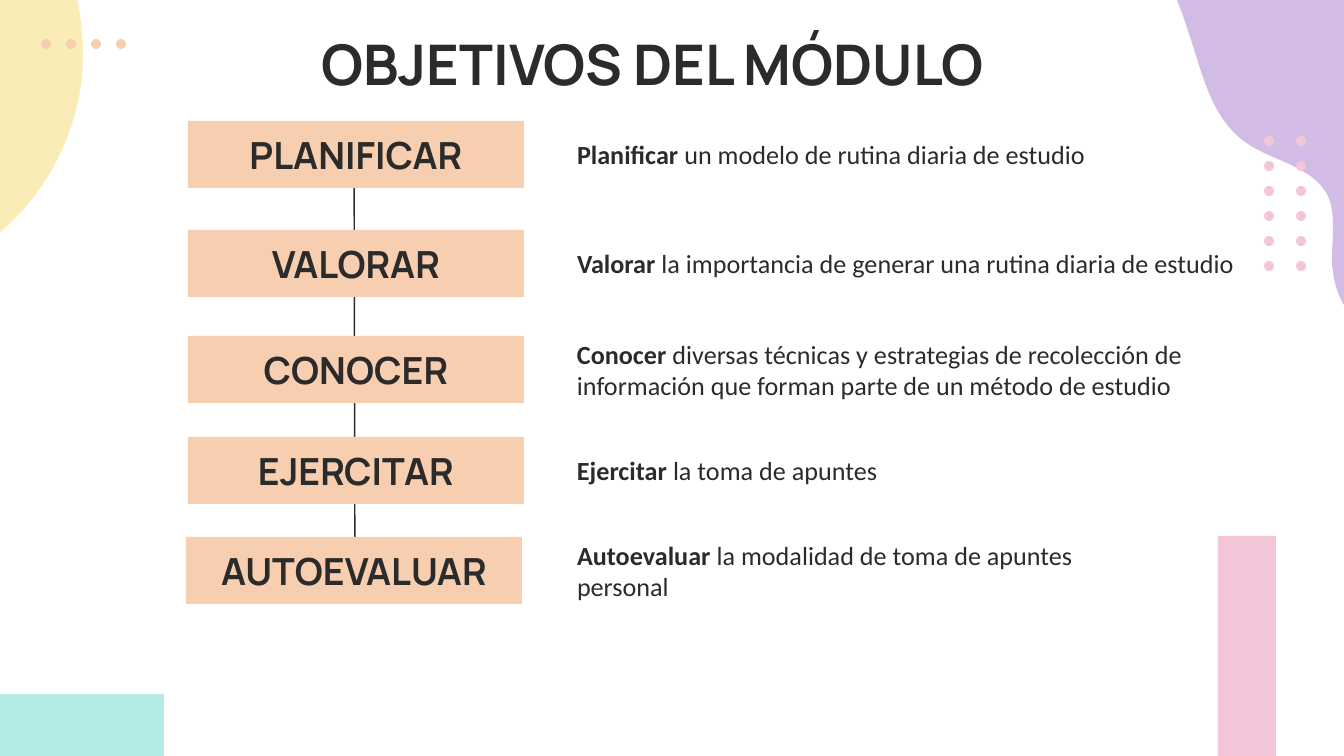
from dataclasses import dataclass

from lxml import etree
from pptx import Presentation
from pptx.dml.color import RGBColor
from pptx.enum.shapes import MSO_CONNECTOR, MSO_SHAPE
from pptx.enum.text import MSO_ANCHOR, PP_ALIGN
from pptx.oxml.ns import qn
from pptx.util import Pt

STRAIGHT = MSO_CONNECTOR.STRAIGHT
RECTANGLE = MSO_SHAPE.RECTANGLE
OVAL = MSO_SHAPE.OVAL
TOP = MSO_ANCHOR.TOP
MIDDLE = MSO_ANCHOR.MIDDLE
LEFT = PP_ALIGN.LEFT
CENTER = PP_ALIGN.CENTER

SLIDE_WIDTH, SLIDE_HEIGHT = 1344, 756
EMU_PER_PX = 9144000 / SLIDE_WIDTH
INSET = 13
CURVE_STEPS = 16


@dataclass(frozen=True)
class Theme:
    ink: str = "2B2B2B"
    peach: str = "F7CFB0"
    yellow: str = "FAECB6"
    lilac: str = "D2BCE6"
    pink: str = "F3C5D8"
    mint: str = "B5EBE7"
    heading_font: str = "Manrope"
    body_font: str = "Calibri"
    title_size: int = 30
    step_size: int = 20
    body_size: int = 14
    line_width: float = 0.75


THEME = Theme()

YELLOW_BLOB = (
    [(112, -245), (-113, -245), (-113, 235), (-3, 235)],
    [
        [(50, 191), (83, 124), (83, 56)],
        [(83, 3), (65, -48), (63, -102)],
        [(63, -156), (82, -206), (112, -245)],
    ],
)
LILAC_BLOB = (
    [(1126, -89), (1445, -89), (1445, 329), (1363, 329)],
    [
        [(1347, 314), (1335, 294), (1333, 271)],
        [(1332, 267), (1332, 263), (1332, 261)],
        [(1332, 250), (1333, 238), (1333, 227)],
        [(1333, 215), (1332, 204), (1327, 194)],
        [(1310, 165), (1271, 161), (1245, 142)],
        [(1210, 117), (1202, 71), (1188, 31)],
        [(1175, -12), (1153, -52), (1126, -89)],
    ],
)

OBJECTIVES = [
    ("Planificar", "un modelo de rutina diaria de estudio", 188, 121, 720),
    ("Valorar", "la importancia de generar una rutina diaria de estudio", 188, 230, 720),
    (
        "Conocer",
        "diversas técnicas y estrategias de recolección de información "
        "que forman parte de un método de estudio",
        188, 336, 676,
    ),
    ("Ejercitar", "la toma de apuntes", 188, 437, 712),
    ("Autoevaluar", "la modalidad de toma de apuntes personal", 186, 537, 540),
]
STEP_WIDTH, STEP_HEIGHT = 336, 67
DESCRIPTION_LEFT = 564


def px(length):
    return round(length * EMU_PER_PX)


def paint(shape, color):
    shape.shadow.inherit = False
    shape.fill.solid()
    shape.fill.fore_color.rgb = RGBColor.from_string(color)
    shape.line.fill.background()


def add_block(slide, preset, box, color):
    block = slide.shapes.add_shape(preset, *map(px, box))
    paint(block, color)
    return block


def bezier(start, first, second, end):
    for step in range(1, CURVE_STEPS + 1):
        t = step / CURVE_STEPS
        u = 1 - t
        weights = (u**3, 3 * u * u * t, 3 * u * t * t, t**3)
        yield tuple(
            sum(weight * coordinate for weight, coordinate in zip(weights, axis))
            for axis in zip(start, first, second, end)
        )


def add_blob(slide, corners, curves, color):
    outline = list(corners)
    for curve in curves:
        outline.extend(bezier(outline[-1], *curve))
    points = [(px(x), px(y)) for x, y in outline]
    builder = slide.shapes.build_freeform(*points[0])
    builder.add_line_segments(points[1:], close=True)
    paint(builder.convert_to_shape(), color)


def add_dots(slide, left, top, columns, rows, column_gap, row_gap, color):
    for column in range(columns):
        for row in range(rows):
            box = (left + column * column_gap, top + row * row_gap, 10, 10)
            add_block(slide, OVAL, box, color)


def add_thread(slide, start, end):
    thread = slide.shapes.add_connector(STRAIGHT, *map(px, start + end))
    thread.line.color.rgb = RGBColor.from_string(THEME.ink)
    thread.line.width = Pt(THEME.line_width)
    etree.SubElement(thread.element.spPr, qn("a:effectLst"))


def write(shape, parts, font, size, align, anchor):
    frame = shape.text_frame
    frame.word_wrap = True
    frame.vertical_anchor = anchor
    frame.margin_left = frame.margin_right = px(INSET)
    frame.margin_top = frame.margin_bottom = px(INSET)
    paragraph = frame.paragraphs[0]
    paragraph.alignment = align
    for text, bold in parts:
        run = paragraph.add_run()
        run.text = text
        run.font.name = font
        run.font.size = Pt(size)
        run.font.bold = bold
        run.font.color.rgb = RGBColor.from_string(THEME.ink)


def add_title(slide, text):
    title = slide.shapes.add_textbox(*map(px, (286, 17, 734, 85)))
    write(title, [(text, True)], THEME.heading_font, THEME.title_size, CENTER, TOP)


def add_objective(slide, verb, goal, left, top, goal_width):
    step = add_block(slide, RECTANGLE, (left, top, STEP_WIDTH, STEP_HEIGHT), THEME.peach)
    write(step, [(verb.upper(), True)], THEME.heading_font, THEME.step_size, CENTER, MIDDLE)
    description = slide.shapes.add_textbox(
        *map(px, (DESCRIPTION_LEFT, top, goal_width, STEP_HEIGHT))
    )
    parts = [(f"{verb} ", True), (goal, False)]
    write(description, parts, THEME.body_font, THEME.body_size, LEFT, MIDDLE)


def add_decoration(slide):
    add_blob(slide, *YELLOW_BLOB, THEME.yellow)
    add_blob(slide, *LILAC_BLOB, THEME.lilac)
    add_dots(slide, 1264, 136, 2, 6, 32, 25, THEME.pink)
    add_block(slide, RECTANGLE, (-1, 694, 165, 63), THEME.mint)
    add_dots(slide, 41, 39, 4, 1, 25, 25, THEME.peach)
    add_block(slide, RECTANGLE, (1218, 536, 58, 220), THEME.pink)


def main():
    deck = Presentation()
    deck.slide_width = px(SLIDE_WIDTH)
    deck.slide_height = px(SLIDE_HEIGHT)
    slide = deck.slides.add_slide(deck.slide_layouts[6])
    add_decoration(slide)
    add_thread(slide, (354, 122), (355, 603))
    add_title(slide, "OBJETIVOS DEL MÓDULO")
    for objective in OBJECTIVES:
        add_objective(slide, *objective)
    deck.save("out.pptx")


if __name__ == "__main__":
    main()
